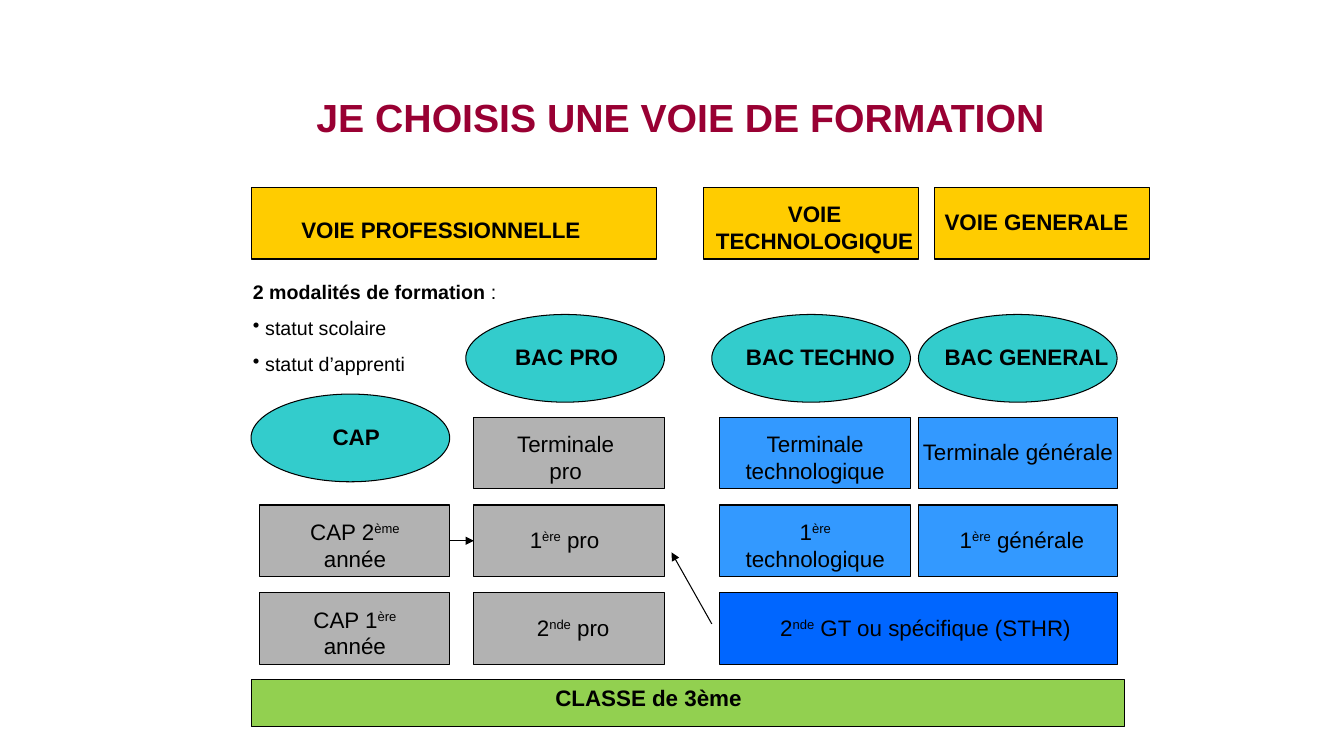
from lxml.etree import SubElement
from pptx import Presentation
from pptx.dml.color import RGBColor
from pptx.enum.shapes import MSO_CONNECTOR, MSO_SHAPE
from pptx.enum.text import MSO_ANCHOR, MSO_AUTO_SIZE, PP_ALIGN
from pptx.oxml.ns import qn
from pptx.util import Inches, Pt

BLACK = RGBColor(0x00, 0x00, 0x00)
CRIMSON = RGBColor(0x99, 0x00, 0x33)
YELLOW = RGBColor(0xFF, 0xCC, 0x00)
TEAL = RGBColor(0x33, 0xCC, 0xCC)
GREY = RGBColor(0xB2, 0xB2, 0xB2)
SKY = RGBColor(0x33, 0x99, 0xFF)
BLUE = RGBColor(0x00, 0x66, 0xFF)
GREEN = RGBColor(0x92, 0xD0, 0x50)

TITLE = "JE CHOISIS UNE VOIE DE FORMATION"
MODES_HEAD = ("2 modalités de formation", " :")
MODES = [" statut scolaire", " statut d’apprenti"]

LEFT, CENTER = PP_ALIGN.LEFT, PP_ALIGN.CENTER
COLUMNS = {"cap": (2.57, 1.89), "pro": (4.7, 1.89), "techno": (7.14, 1.89),
           "general": (9.11, 1.97), "gt": (7.14, 3.94)}
ROW_TOP, ROW_STEP, BOX_H = 4.14, 0.87, 0.71
OVAL_W, OVAL_H = 1.97, 0.87
HEAD_TOP, BASE_TOP, BASE_H = 1.86, 6.74, 0.47
LABEL_STEP = 0.08

# Each label is (text, left, width, steps below the top of its box, alignment)
HEADERS = [
    (2.49, 4.02, ("VOIE PROFESSIONNELLE", 2.89, 3.78, 3, LEFT)),
    (6.98, 2.13, ("VOIE TECHNOLOGIQUE", 6.9, 2.36, 1, CENTER)),
    (9.27, 2.13, ("VOIE GENERALE", 9.27, 2.05, 2, LEFT)),
]
DIPLOMAS = [
    ("cap", 3.91, ("CAP", 3.2, 0.87, 3, LEFT)),
    ("pro", 3.12, ("BAC PRO", 5.01, 1.5, 3, LEFT)),
    ("techno", 3.12, ("BAC TECHNO", 7.3, 1.81, 3, LEFT)),
    ("general", 3.12, ("BAC GENERAL", 9.27, 1.97, 3, LEFT)),
]
CLASSES = [
    ("pro", 0, GREY, ("Terminale pro", 4.86, 1.5, 1, CENTER)),
    ("techno", 0, SKY, ("Terminale technologique", 7.22, 1.73, 1, CENTER)),
    ("general", 0, SKY, ("Terminale générale", 9.03, 2.13, 2, CENTER)),
    ("cap", 1, GREY, ("CAP 2^ème^ année", 2.81, 1.42, 1, CENTER)),
    ("pro", 1, GREY, ("1^ère^ pro", 4.3, 2.6, 2, CENTER)),
    ("techno", 1, SKY, ("1^ère^ technologique", 7.14, 1.89, 1, CENTER)),
    ("general", 1, SKY, ("1^ère^ générale", 9.11, 2.05, 2, CENTER)),
    ("cap", 2, GREY, ("CAP 1^ère^ année", 2.89, 1.26, 1, CENTER)),
    ("pro", 2, GREY, ("2^nde^ pro", 4.7, 1.97, 2, CENTER)),
    ("gt", 2, BLUE, ("2^nde^ GT ou spécifique (STHR)", 7.64, 3.23, 2, LEFT)),
]
BASE = (2.49, 8.66, ("CLASSE de 3ème", 5.41, 2.52, 0, LEFT))


def add_box(slide, kind, x, y, w, h, fill):
    s = slide.shapes.add_shape(kind, Inches(x), Inches(y), Inches(w), Inches(h))
    s.shadow.inherit = False
    s.fill.solid()
    s.fill.fore_color.rgb = fill
    s.line.color.rgb = BLACK
    s.line.width = Pt(0.75)
    return s


def add_frame(slide, x, y, w, h):
    tf = slide.shapes.add_textbox(Inches(x), Inches(y), Inches(w), Inches(h)).text_frame
    tf.word_wrap = True
    tf.auto_size = MSO_AUTO_SIZE.SHAPE_TO_FIT_TEXT
    return tf


def add_run(p, text, size, bold=False, color=BLACK):
    r = p.add_run()
    r.text = text
    r.font.name, r.font.size, r.font.bold = "Arial", Pt(size), bold
    r.font.color.rgb = color
    return r


def add_label(slide, box_top, label, bold):
    text, x, w, steps, align = label
    h = 0.64 if steps == 1 else 0.37
    p = add_frame(slide, x, box_top + steps * LABEL_STEP, w, h).paragraphs[0]
    p.alignment, p.space_before = align, Pt(10)
    for i, part in enumerate(text.split("^")):
        r = add_run(p, part, 16, bold)
        if i % 2:
            r._r.get_or_add_rPr().set("baseline", "30000")


def add_arrow(slide, x1, y1, x2, y2):
    c = slide.shapes.add_connector(MSO_CONNECTOR.STRAIGHT, Inches(x1), Inches(y1),
                                   Inches(x2), Inches(y2))
    c.line.color.rgb = BLACK
    c.line.width = Pt(0.75)
    SubElement(c.line._get_or_add_ln(), qn("a:tailEnd"), type="triangle")
    SubElement(c._element.spPr, qn("a:effectLst"))
    return c


def add_modes(slide):
    tf = add_frame(slide, 2.41, 2.73, 2.76, 1.06)
    p = tf.paragraphs[0]
    p.space_before = Pt(8.8)
    add_run(p, MODES_HEAD[0], 14, True)
    add_run(p, MODES_HEAD[1], 14)
    for mode in MODES:
        p = tf.add_paragraph()
        p.space_before = Pt(8.8)
        add_run(p, mode, 14)
        SubElement(p._p.get_or_add_pPr(), qn("a:buChar"), char="•")


def main():
    """Build the slide of training routes and save it."""
    prs = Presentation()
    prs.slide_width, prs.slide_height = Inches(13.33), Inches(7.5)
    slide = prs.slides.add_slide(prs.slide_layouts[6])

    tf = add_frame(slide, 3.04, 0.6, 8.27, 0.84)
    tf.auto_size = MSO_AUTO_SIZE.NONE
    tf.vertical_anchor = MSO_ANCHOR.BOTTOM
    add_run(tf.paragraphs[0], TITLE, 28, True, CRIMSON)

    labels, boxes = [], {}
    for x, w, label in HEADERS:
        add_box(slide, MSO_SHAPE.RECTANGLE, x, HEAD_TOP, w, BOX_H, YELLOW)
        labels.append((HEAD_TOP, label, True))
    for column, y, label in DIPLOMAS:
        x = sum(COLUMNS[column]) - OVAL_W
        add_box(slide, MSO_SHAPE.OVAL, x, y, OVAL_W, OVAL_H, TEAL)
        labels.append((y, label, True))
    for column, row, fill, label in CLASSES:
        x, w = COLUMNS[column]
        y = ROW_TOP + row * ROW_STEP
        boxes[column, row] = add_box(slide, MSO_SHAPE.RECTANGLE, x, y, w, BOX_H, fill)
        labels.append((y, label, False))
    x, w, label = BASE
    add_box(slide, MSO_SHAPE.RECTANGLE, x, BASE_TOP, w, BASE_H, GREEN)
    labels.append((BASE_TOP, label, True))

    for box_top, label, bold in labels:
        add_label(slide, box_top, label, bold)
    add_modes(slide)

    bridge = add_arrow(slide, 4.46, 5.4, 4.7, 5.4)
    bridge.begin_connect(boxes["cap", 1], 3)
    bridge.end_connect(boxes["pro", 1], 1)
    add_arrow(slide, 7.06, 6.19, 6.66, 5.48)
    prs.save("out.pptx")


if __name__ == "__main__":
    main()
